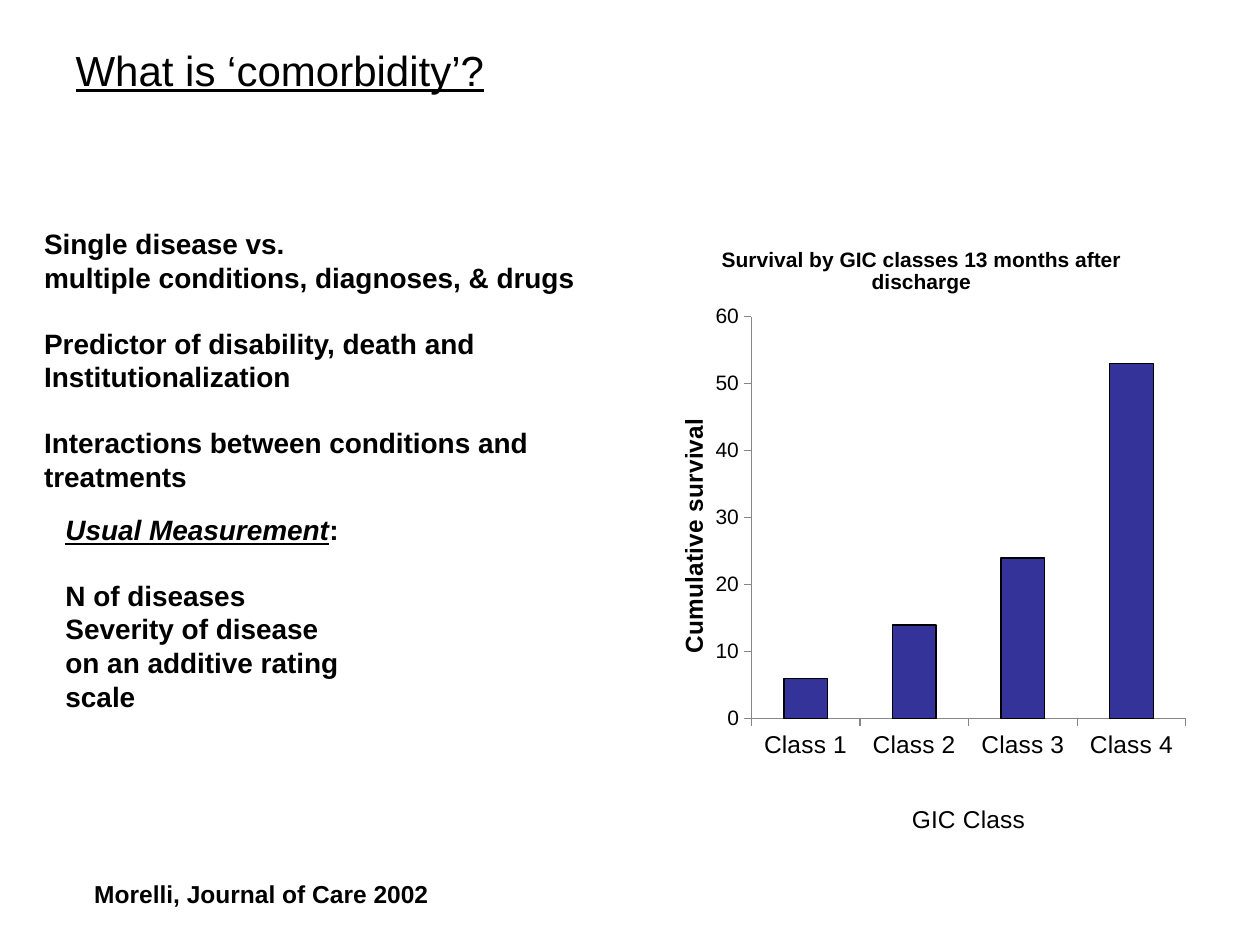
from dataclasses import dataclass

from lxml import etree
from pptx import Presentation
from pptx.chart.data import CategoryChartData
from pptx.dml.color import RGBColor
from pptx.enum.chart import XL_CHART_TYPE, XL_TICK_MARK
from pptx.enum.text import MSO_ANCHOR, MSO_AUTO_SIZE, PP_ALIGN
from pptx.oxml.ns import qn
from pptx.util import Cm, Pt

COLUMN = XL_CHART_TYPE.COLUMN_CLUSTERED
OUTSIDE = XL_TICK_MARK.OUTSIDE
NO_FIT, GROW = MSO_AUTO_SIZE.NONE, MSO_AUTO_SIZE.SHAPE_TO_FIT_TEXT
TOP, LEFT = MSO_ANCHOR.TOP, PP_ALIGN.LEFT

FONT = "Arial"
BLACK, BAR, AXIS = "000000", "333399", "868686"
LINE_HEIGHT = 1.15


@dataclass
class Note:
    """A bold text box made of groups of lines, one line apart."""
    left: float
    top: float
    width: float
    height: float
    groups: list[list[str]]
    size: int = 16
    wrap: bool = False


def rgb(value: str) -> RGBColor:
    return RGBColor.from_string(value)


def style(font, size: float, bold: bool = False) -> None:
    font.name, font.size, font.bold = FONT, Pt(size), bold
    font.color.rgb = rgb(BLACK)


def add_note(s, note: Note):
    box = s.shapes.add_textbox(Cm(note.left), Cm(note.top), Cm(note.width), Cm(note.height))
    tf = box.text_frame
    tf.word_wrap, tf.auto_size = note.wrap, GROW
    tf.text = "\n".join(line for group in note.groups for line in group)
    starts = {sum(map(len, note.groups[:i])) for i in range(1, len(note.groups))}
    for i, p in enumerate(tf.paragraphs):
        if i in starts:
            p.space_before = Pt(note.size * LINE_HEIGHT)
        style(p.runs[0].font, note.size, bold=True)
    return tf


def make_layout(**values) -> etree._Element:
    """Manual chart layout, in fractions of the chart area."""
    layout = etree.Element(qn("c:layout"))
    manual = etree.SubElement(layout, qn("c:manualLayout"))
    for name, value in values.items():
        etree.SubElement(manual, qn(f"c:{name}")).set("val", str(value))
    return layout


def set_title(owner, text: str, size: int, bold: bool, x=None, y=None) -> None:
    """Title of a chart or an axis, optionally placed by hand."""
    title = owner.chart_title if hasattr(owner, "chart_title") else owner.axis_title
    title.text_frame.text = text
    style(title.text_frame.paragraphs[0].runs[0].font, size, bold)
    element = title._element
    for old in element.findall(qn("c:layout")):
        element.remove(old)
    element.find(qn("c:tx")).addnext(make_layout(xMode="edge", yMode="edge", x=x, y=y))


def style_axis(axis, size: int) -> None:
    axis.has_major_gridlines = False
    axis.major_tick_mark = OUTSIDE
    style(axis.tick_labels.font, size)
    axis.format.line.color.rgb = rgb(AXIS)


def add_survival_chart(s) -> None:
    data = CategoryChartData()
    data.categories = [f"Class {n}" for n in range(1, 5)]
    data.add_series("Series 1", (6, 14, 24, 53))
    chart = s.shapes.add_chart(COLUMN, Cm(12.9), Cm(4.39), Cm(11.23), Cm(12.57), data).chart
    style(chart.font, 18)
    chart.has_legend = False

    # Axes and titles
    values, classes = chart.value_axis, chart.category_axis
    style_axis(values, 12)
    style_axis(classes, 14)
    values.minimum_scale, values.maximum_scale, values.major_unit = 0, 60, 10
    set_title(chart, "Survival by GIC classes 13 months after discharge", 12, True, 0.14, 0.04)
    set_title(values, "Cumulative survival", 14, True, 0.06, 0.32)
    set_title(classes, "GIC Class", 14, False, 0.48, 0.94)

    # Bars
    plot = chart.plots[0]
    plot.gap_width, plot.vary_by_categories = 150, False
    bars = plot.series[0].format
    bars.fill.solid()
    bars.fill.fore_color.rgb = rgb(BAR)
    bars.line.color.rgb = rgb(BLACK)
    bars.line.width = Pt(0.75)

    # Plot area
    area = chart._chartSpace.chart.plotArea
    for old in area.findall(qn("c:layout")):
        area.remove(old)
    area.insert(0, make_layout(layoutTarget="inner", xMode="edge", yMode="edge",
                               x=0.2, y=0.16, w=0.78, h=0.65))


def main() -> None:
    prs = Presentation()
    prs.slide_width, prs.slide_height = Cm(25.4), Cm(19.05)
    s = prs.slides.add_slide(prs.slide_layouts[5])

    # Title
    title = s.shapes.title
    title.left, title.top, title.width, title.height = Cm(1.27), Cm(0.76), Cm(22.86), Cm(3.18)
    tf = title.text_frame
    tf.text = "What is ‘comorbidity’?"
    tf.vertical_anchor, tf.auto_size = TOP, NO_FIT
    p = tf.paragraphs[0]
    p.alignment = LEFT
    style(p.runs[0].font, 24)
    p.runs[0].font.underline = True

    add_survival_chart(s)

    # Key points
    add_note(s, Note(0.64, 4.45, 11.35, 6.4, [
        ["Single disease vs.", "multiple conditions, diagnoses, & drugs"],
        ["Predictor of disability, death and", "Institutionalization"],
        ["Interactions between conditions and", "treatments"],
    ]))

    # Measurement, with an emphasised heading
    tf = add_note(s, Note(1.07, 10.21, 6.27, 5.05, [
        ["Usual Measurement"],
        ["N of diseases", "Severity of disease", "on an additive rating scale"],
    ], wrap=True))
    p = tf.paragraphs[0]
    p.runs[0].font.italic = p.runs[0].font.underline = True
    r = p.add_run()
    r.text = ":"
    style(r.font, 16, bold=True)

    # Reference
    add_note(s, Note(1.65, 17.6, 7.52, 0.86, [["Morelli, Journal of Care 2002"]], size=14))

    prs.save("out.pptx")


if __name__ == "__main__":
    main()
